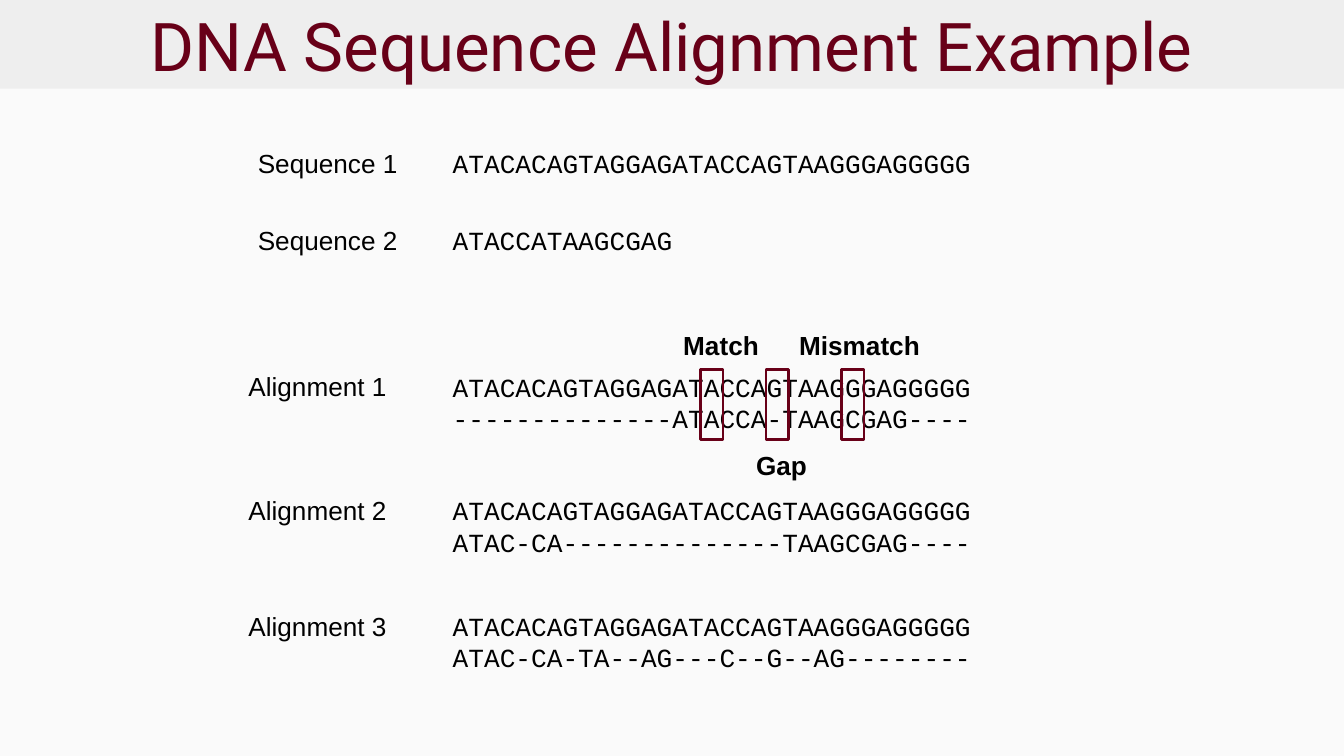
from pptx import Presentation
from pptx.dml.color import RGBColor
from pptx.enum.shapes import MSO_SHAPE
from pptx.enum.text import MSO_ANCHOR, PP_ALIGN
from pptx.util import Inches, Pt

RECT = MSO_SHAPE.RECTANGLE
LEFT, CENTER = PP_ALIGN.LEFT, PP_ALIGN.CENTER
TOP, MIDDLE = MSO_ANCHOR.TOP, MSO_ANCHOR.MIDDLE
COLORS = {"background": "FAFAFA", "band": "EEEEEE", "maroon": "680018", "text": "000000"}

prs = Presentation()
prs.slide_width = Inches(10)
prs.slide_height = Inches(10 * 9 / 16)
slide = prs.slides.add_slide(prs.slide_layouts[6])
slide.background.fill.solid()
slide.background.fill.fore_color.rgb = RGBColor.from_string(COLORS["background"])


def add_rect(left, top, width, height):
    rect = slide.shapes.add_shape(RECT, Inches(left), Inches(top), Inches(width), Inches(height))
    rect.shadow.inherit = False
    return rect


def write(shape, text, font="Arial", size=14, color="text", bold=False,
          align=LEFT, anchor=TOP):
    frame = shape.text_frame
    frame.word_wrap = True
    frame.vertical_anchor = anchor
    frame.margin_left = frame.margin_right = Inches(0.1)
    frame.margin_top = frame.margin_bottom = Inches(0.1)
    frame.text = text
    for paragraph in frame.paragraphs:
        paragraph.alignment = align
        for run in paragraph.runs:
            run.font.name = font
            run.font.size = Pt(size)
            run.font.bold = bold
            run.font.color.rgb = RGBColor.from_string(COLORS[color])


# Title band
title = add_rect(0, 0, 10, 0.66)
title.fill.solid()
title.fill.fore_color.rgb = RGBColor.from_string(COLORS["band"])
title.line.fill.background()
write(title, "DNA Sequence Alignment Example", font="Roboto", size=36,
      color="maroon", align=CENTER, anchor=MIDDLE)

# Sequences and their alignments: label, label left, top, sequence width, height, lines
sequence_1 = "ATACACAGTAGGAGATACCAGTAAGGGAGGGGG"
rows = [
    ("Sequence 1", 1.82, 1.00, 4.98, 0.57, [sequence_1]),
    ("Sequence 2", 1.82, 1.57, 2.44, 0.57, ["ATACCATAAGCGAG"]),
    ("Alignment 1", 1.75, 2.66, 4.98, 0.69, [sequence_1, "--------------ATACCA-TAAGCGAG----"]),
    ("Alignment 2", 1.75, 3.58, 4.98, 0.69, [sequence_1, "ATAC-CA--------------TAAGCGAG----"]),
    ("Alignment 3", 1.75, 4.44, 4.98, 0.69, [sequence_1, "ATAC-CA-TA--AG---C--G--AG--------"]),
]
for label, label_left, top, width, height, lines in rows:
    label_box = slide.shapes.add_textbox(Inches(label_left), Inches(top), Inches(1.46), Inches(0.57))
    write(label_box, label)
    bases = slide.shapes.add_textbox(Inches(3.27), Inches(top), Inches(width), Inches(height))
    write(bases, "\n".join(lines), font="Courier New")

# Outlined columns in alignment 1
for left in (5.21, 5.7, 6.26):
    column = add_rect(left, 2.75, 0.17, 0.52)
    column.fill.background()
    column.line.color.rgb = RGBColor.from_string(COLORS["maroon"])
    column.line.width = Pt(1.5)

# Names of the outlined columns
for name, left, top, width, height in [
    ("Match", 4.92, 2.35, 0.89, 0.57),
    ("Gap", 5.48, 3.24, 0.67, 0.39),
    ("Mismatch", 5.8, 2.35, 1.19, 0.57),
]:
    caption = slide.shapes.add_textbox(Inches(left), Inches(top), Inches(width), Inches(height))
    write(caption, name, bold=True, align=CENTER)

prs.save("out.pptx")
